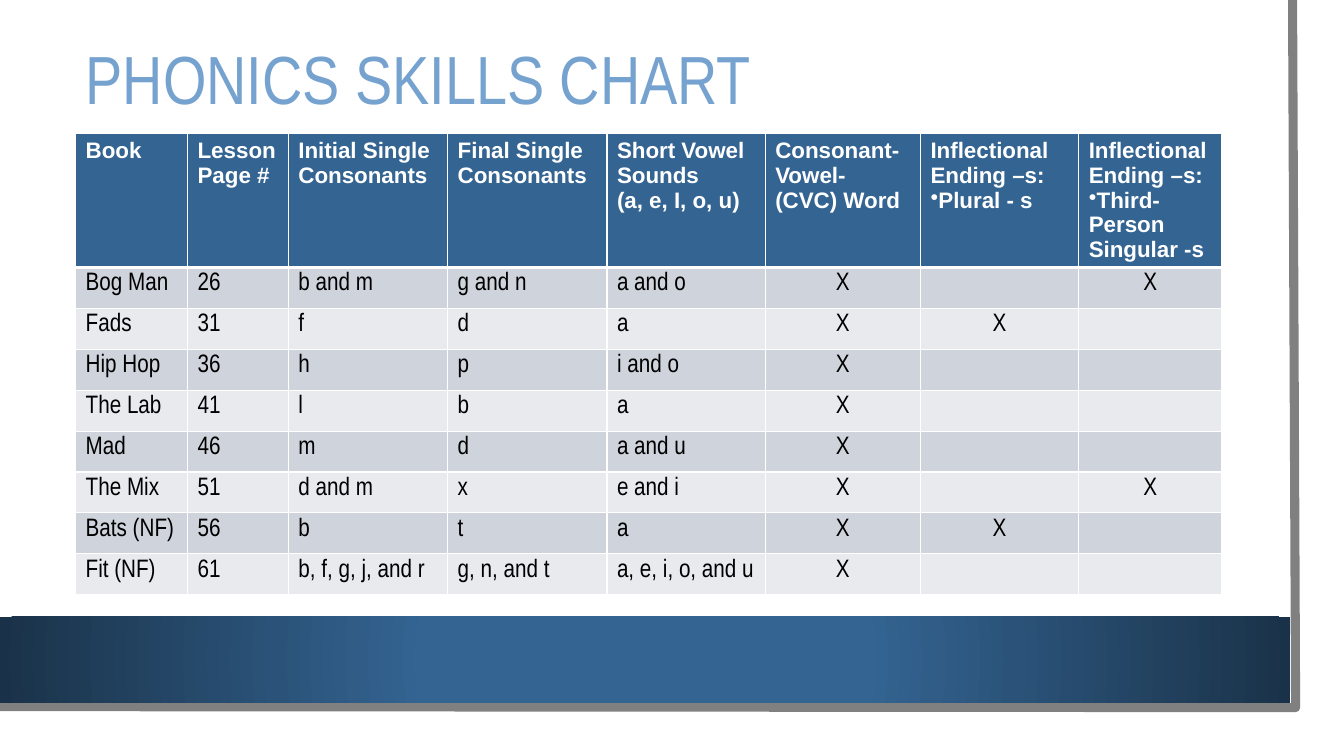
import pptx
import pptx.dml.color
import pptx.enum.shapes
import pptx.enum.text
import pptx.oxml
import pptx.oxml.ns
import pptx.util
from pptx.util import Inches

ALIGN = pptx.enum.text.PP_ALIGN
ANCHOR = pptx.enum.text.MSO_ANCHOR
HEADINGS = [
    ["Book"],
    ["Lesson Page #"],
    ["Initial Single Consonants"],
    ["Final Single Consonants"],
    ["Short Vowel Sounds", "(a, e, I, o, u)"],
    ["Consonant-Vowel- (CVC) Word"],
    ["Inflectional Ending –s:", "•Plural - s"],
    ["Inflectional Ending –s:", "•Third-Person Singular -s"],
]
BOOKS = [
    ["Bog Man", "26", "b and m", "g and n", "a and o", "X", "", "X"],
    ["Fads", "31", "f", "d", "a", "X", "X", ""],
    ["Hip Hop", "36", "h", "p", "i and o", "X", "", ""],
    ["The Lab", "41", "l", "b", "a", "X", "", ""],
    ["Mad", "46", "m", "d", "a and u", "X", "", ""],
    ["The Mix", "51", "d and m", "x", "e and i", "X", "", "X"],
    ["Bats (NF)", "56", "b", "t", "a", "X", "X", ""],
    ["Fit (NF)", "61", "b, f, g, j, and r", "g, n, and t", "a, e, i, o, and u", "X", "", ""],
]
COLUMN_WIDTHS = [1.11, 1, 1.58, 1.58, 1.57, 1.54, 1.57, 1.42]
HEADER_HEIGHT = 1.33
BODY_HEIGHT = 3.24


def color(value):
    return pptx.dml.color.RGBColor.from_string(value)


def xml(source):
    return pptx.oxml.parse_xml(source.replace(">", f" {pptx.oxml.ns.nsdecls('a')}>", 1))


def write(para, text, size=18, font="Arial Narrow", ink="000000", bold=False, align=ALIGN.LEFT):
    para.alignment = align
    if text.startswith("•"):
        properties = para._p.get_or_add_pPr()
        properties.set("marL", "0")
        properties.set("indent", "0")
        properties.append(xml('<a:buChar char="•"></a:buChar>'))
        text = text[1:]
    span = para.add_run()
    span.text = text
    span.font.size = pptx.util.Pt(size)
    span.font.name = font
    span.font.bold = bold
    span.font.color.rgb = color(ink)


class SkillsPage:
    white = "FFFFFF"
    blue = "346492"
    navy = "1A3249"
    sky = "75A2CE"
    gray = "808080"
    bands = ["CED3DC", "E8EAEE"]

    def __init__(self, deck):
        self.page = deck.slides.add_slide(deck.slide_layouts[5])

    def panel(self, left, top, width, height, fill):
        box = self.page.shapes.add_shape(
            pptx.enum.shapes.MSO_SHAPE.RECTANGLE,
            Inches(left), Inches(top), Inches(width), Inches(height))
        box.shadow.inherit = False
        box.line.fill.background()
        box.fill.solid()
        box.fill.fore_color.rgb = color(fill)
        return box

    def glow(self, left, top, width, height):
        box = self.panel(left, top, width, height, self.blue)
        solid = box._element.spPr.find(pptx.oxml.ns.qn("a:solidFill"))
        solid.getparent().replace(solid, xml(
            '<a:gradFill rotWithShape="1"><a:gsLst>'
            f'<a:gs pos="34000"><a:srgbClr val="{self.blue}"/></a:gs>'
            f'<a:gs pos="100000"><a:srgbClr val="{self.navy}"/></a:gs></a:gsLst>'
            '<a:path path="circle"><a:fillToRect l="50000" t="50000" r="50000" b="50000"/></a:path>'
            '</a:gradFill>'))

    def edge(self, points, width):
        corners = [(Inches(x), Inches(y)) for x, y in points]
        builder = self.page.shapes.build_freeform(*corners[0])
        builder.add_line_segments(corners[1:], close=False)
        outline = builder.convert_to_shape()
        outline.shadow.inherit = False
        outline.fill.background()
        outline.line.color.rgb = color(self.gray)
        outline.line.width = pptx.util.Pt(width)

    def title(self, text, left, top, width, height):
        box = self.page.shapes.title
        box._element.getparent().append(box._element)
        box.left, box.top = Inches(left), Inches(top)
        box.width, box.height = Inches(width), Inches(height)
        frame = box.text_frame
        frame.word_wrap = True
        frame.auto_size = pptx.enum.text.MSO_AUTO_SIZE.NONE
        frame.vertical_anchor = ANCHOR.MIDDLE
        para = frame.paragraphs[0]
        para.line_spacing = 0.9
        write(para, text, size=48.6, ink=self.sky)

    def cell(self, cell, lines, fill, top=1, bottom=1, **style):
        cell.vertical_anchor = ANCHOR.TOP
        frame = cell.text_frame
        for index, line in enumerate(lines):
            para = frame.add_paragraph() if index else frame.paragraphs[0]
            if line:
                write(para, line, **style)
        properties = cell._tc.get_or_add_tcPr()
        for side, width in zip("LRTB", (1, 1, top, bottom)):
            properties.append(xml(
                f'<a:ln{side} w="{pptx.util.Pt(width)}"><a:solidFill>'
                f'<a:srgbClr val="{self.white}"/></a:solidFill></a:ln{side}>'))
        cell.fill.solid()
        cell.fill.fore_color.rgb = color(fill)

    def table(self, left, top):
        grid = self.page.shapes.add_table(
            len(BOOKS) + 1, len(HEADINGS), Inches(left), Inches(top),
            Inches(sum(COLUMN_WIDTHS)), Inches(HEADER_HEIGHT + BODY_HEIGHT)).table
        for column, width in zip(grid.columns, COLUMN_WIDTHS):
            column.width = Inches(width)
        for row in grid.rows:
            row.height = Inches(BODY_HEIGHT / len(BOOKS))
        grid.rows[0].height = Inches(HEADER_HEIGHT)
        for column, lines in enumerate(HEADINGS):
            self.cell(grid.cell(0, column), lines, self.blue, bottom=3,
                      size=16, font="Arial", ink=self.white, bold=True)
        for row, book in enumerate(BOOKS, 1):
            for column, text in enumerate(book):
                self.cell(grid.cell(row, column), [text], self.bands[(row - 1) % 2],
                          top=3 if row == 1 else 1,
                          align=ALIGN.CENTER if text == "X" else ALIGN.LEFT)


def main():
    deck = pptx.Presentation()
    deck.slide_width = Inches(13.33)
    deck.slide_height = Inches(7.5)
    skills = SkillsPage(deck)
    skills.panel(0, 0, 13.1, 7.27, skills.white)
    skills.edge([(12.82, 0), (12.85, 7.02), (-0.03, 7.01)], 6.5)
    skills.glow(0, 6.12, 12.8, 0.85)
    skills.title("PHONICS SKILLS CHART", 0.75, 0.4, 11.37, 0.83)
    skills.table(0.75, 1.32)
    deck.save("out.pptx")


if __name__ == "__main__":
    main()
